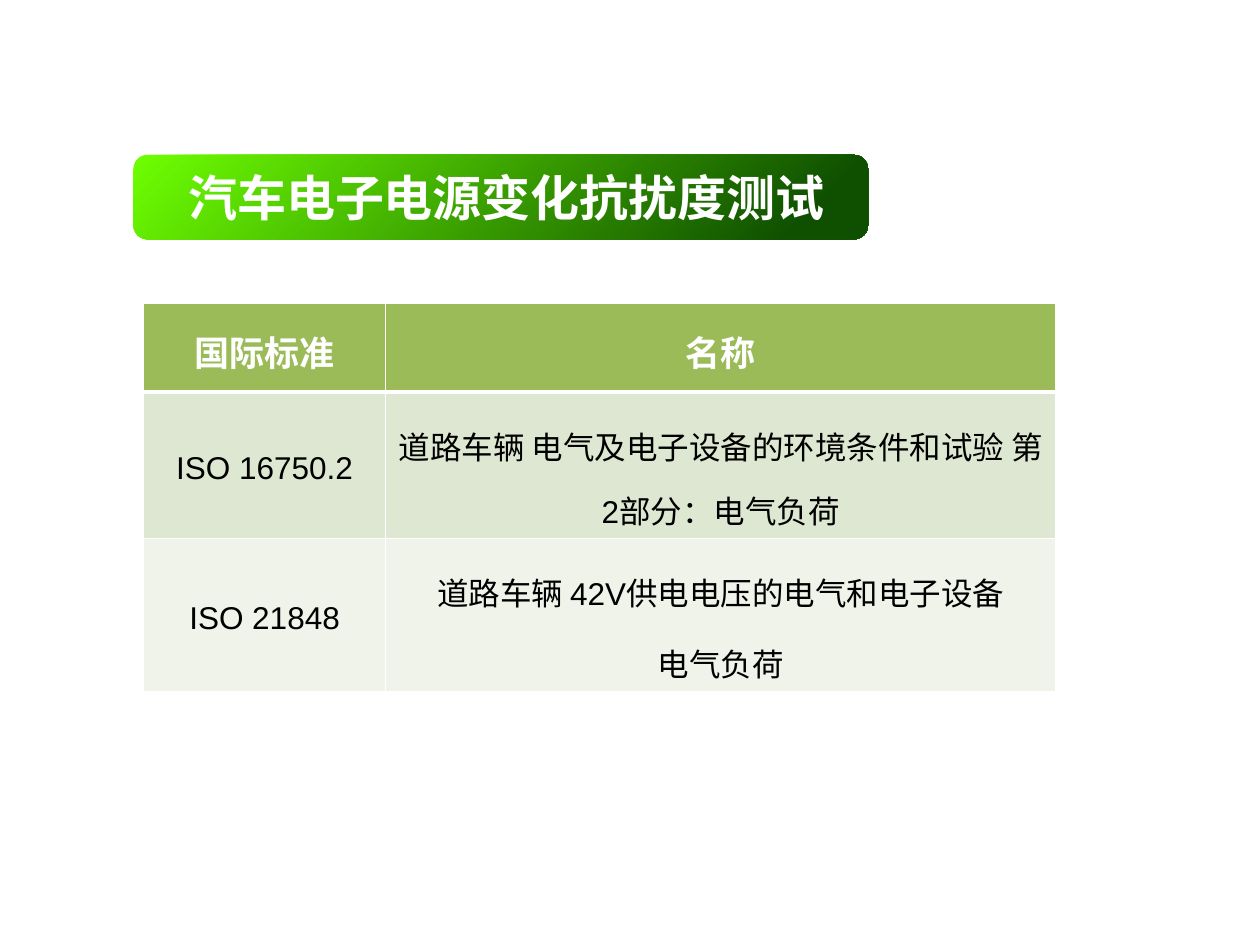
from lxml import etree
from pptx import Presentation
from pptx import util as u
from pptx.dml.color import RGBColor
from pptx.enum import shapes, text
from pptx.oxml.ns import qn

COLORS = {
    "white": "FFFFFF", "black": "000000",
    "lime": "6EFF01", "forest": "0F5000",
    "header": "9BBB59", "band": "DEE7D1", "pale": "EFF3EA",
}


def color(name):
    return RGBColor.from_string(COLORS[name])


def set_borders(cell, top, bottom):
    """Draw white cell borders; top and bottom widths are in points."""
    properties = cell._tc.get_or_add_tcPr()
    widths = {"a:lnL": 1, "a:lnR": 1, "a:lnT": top, "a:lnB": bottom}
    for index, (tag, width) in enumerate(widths.items()):
        line = etree.Element(qn(tag), w=str(u.Pt(width)))
        fill = etree.SubElement(line, qn("a:solidFill"))
        etree.SubElement(fill, qn("a:srgbClr"), val=COLORS["white"])
        properties.insert(index, line)


deck = Presentation()
deck.slide_width, deck.slide_height = u.Inches(10), u.Inches(7.5)
page = deck.slides.add_slide(deck.slide_layouts[6])

# Title banner
banner = page.shapes.add_shape(
    shapes.MSO_SHAPE.ROUNDED_RECTANGLE,
    u.Inches(1.06), u.Inches(1.23), u.Inches(5.83), u.Inches(0.67))
banner.shadow.inherit = False
banner.line.fill.background()
banner.fill.gradient()
banner.fill.gradient_angle = 315
for stop, (position, name) in zip(banner.fill.gradient_stops,
                                  [(0, "lime"), (0.9, "forest")]):
    stop.position = position
    stop.color.rgb = color(name)
banner.text_frame.vertical_anchor = text.MSO_ANCHOR.MIDDLE
para = banner.text_frame.paragraphs[0]
para.text = " 汽车电子电源变化抗扰度测试"
para.alignment = text.PP_ALIGN.CENTER
para.font.name, para.font.size, para.font.bold = "Arial", u.Pt(28), True
para.font.color.rgb = color("white")

# Standards table
column_widths = [1.92, 5.32]
row_heights = [0.7, 1.11, 1.16]
row_fills = ["header", "band", "pale"]
rows = [
    ["国际标准", "名称"],
    ["ISO 16750.2", "道路车辆 电气及电子设备的环境条件和试验 第2部分：电气负荷"],
    ["ISO 21848", "道路车辆 42V供电电压的电气和电子设备\n电气负荷"],
]
table = page.shapes.add_table(
    len(rows), len(column_widths), u.Inches(1.14), u.Inches(2.41),
    u.Inches(sum(column_widths)), u.Inches(sum(row_heights))).table
for column, width in zip(table.columns, column_widths):
    column.width = u.Inches(width)

for r, (row, height, fill) in enumerate(zip(rows, row_heights, row_fills)):
    table.rows[r].height = u.Inches(height)
    is_header = r == 0
    for c, words in enumerate(row):
        cell = table.cell(r, c)
        cell.text = words
        cell.vertical_anchor = text.MSO_ANCHOR.MIDDLE
        cell.margin_top = u.Inches(0.1)
        cell.fill.solid()
        cell.fill.fore_color.rgb = color(fill)
        set_borders(cell, top=3 if r == 1 else 1, bottom=3 if is_header else 1)
        for p, para in enumerate(cell.text_frame.paragraphs):
            para.alignment = text.PP_ALIGN.CENTER
            if p > 0:
                para.space_before = u.Pt(4)
            if c == 1 and not is_header:
                para.line_spacing = 1.4
            para.font.name = "Calibri" if is_header else "Arial"
            para.font.size = u.Pt(20 if is_header else 18)
            para.font.bold = is_header
            para.font.color.rgb = color("white" if is_header else "black")

deck.save("out.pptx")
